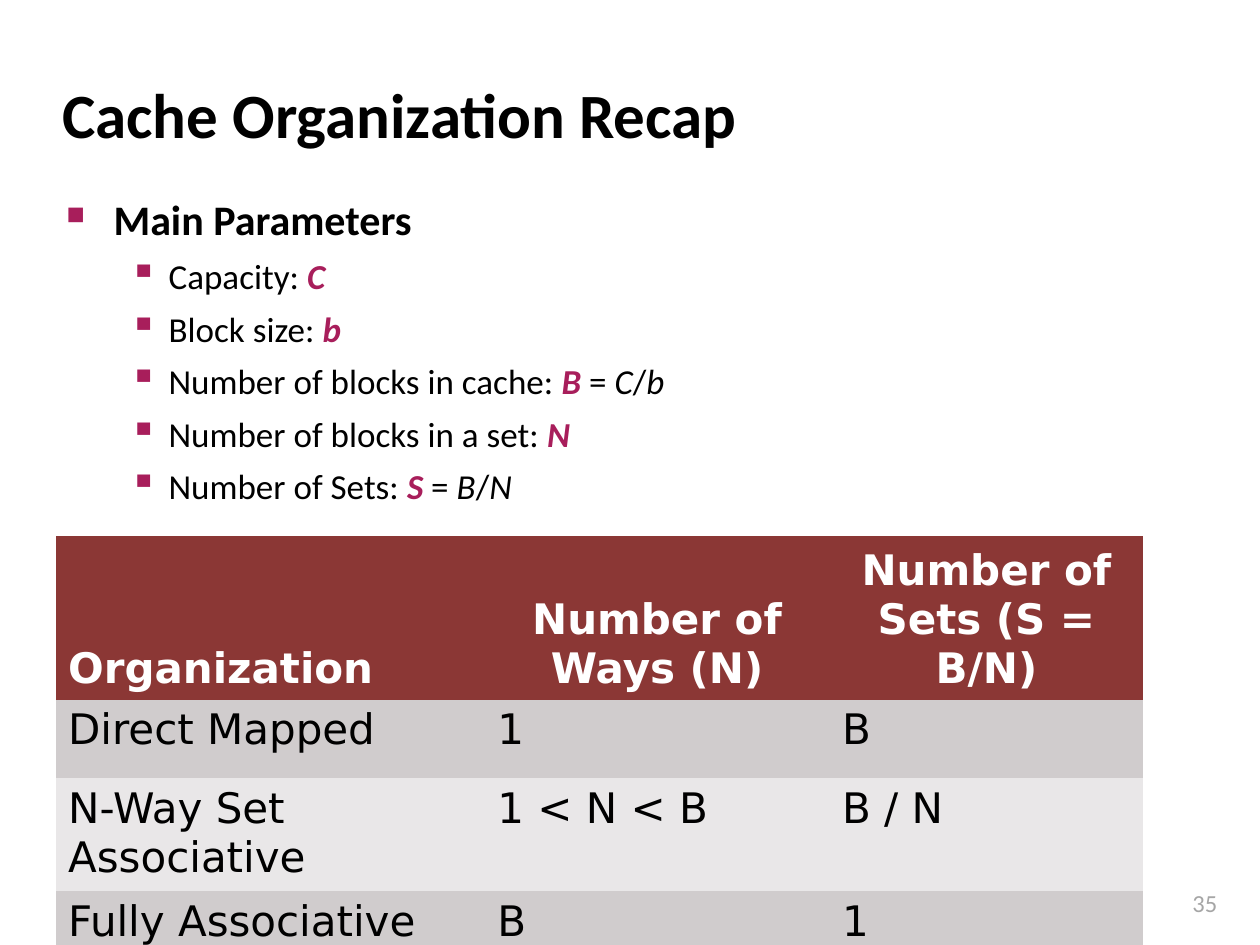
from lxml import etree
from pptx import Presentation
from pptx.dml.color import RGBColor
from pptx.enum.text import MSO_ANCHOR, MSO_AUTO_SIZE, PP_ALIGN
from pptx.oxml.ns import qn
from pptx.util import Cm, Pt

LEFT, CENTER, RIGHT = PP_ALIGN.LEFT, PP_ALIGN.CENTER, PP_ALIGN.RIGHT
TOP, MIDDLE, BOTTOM = MSO_ANCHOR.TOP, MSO_ANCHOR.MIDDLE, MSO_ANCHOR.BOTTOM
NO_AUTOFIT = MSO_AUTO_SIZE.NONE
BLACK, WHITE, GRAY, ACCENT = "000000", "FFFFFF", "A6A6A6", "A81E5B"
HEADER_FILL, BAND_FILLS = "8B3735", ("E9E7E8", "D0CCCD")


def color(hex_code):
    return RGBColor.from_string(hex_code)


def add_text(paragraph, text, size=20, font="Calibri", fill=BLACK, bold=False, italic=False, align=LEFT):
    paragraph.alignment = align
    run = paragraph.add_run()
    run.text = text
    run.font.size = Pt(size)
    run.font.name = font
    run.font.color.rgb = color(fill)
    run.font.bold = bold
    run.font.italic = italic


presentation = Presentation()
presentation.slide_width = Cm(25.4)
presentation.slide_height = Cm(19.05)
slide = presentation.slides.add_slide(presentation.slide_layouts[5])

title = slide.shapes.title
title.left, title.top, title.width, title.height = Cm(1), Cm(1.22), Cm(21.08), Cm(2.11)
title.text_frame.auto_size = NO_AUTOFIT
title.text_frame.vertical_anchor = MIDDLE
add_text(title.text_frame.paragraphs[0], "Cache Organization Recap", size=36, bold=True)

PLAIN = {}
SYMBOL = {"fill": ACCENT, "bold": True, "italic": True}
ITALIC = {"italic": True}
HEADING = {"size": 24, "bold": True}
parameters = [
    (0, [("Main Parameters", HEADING)]),
    (1, [("Capacity: ", PLAIN), ("C", SYMBOL)]),
    (1, [("Block size: ", PLAIN), ("b", SYMBOL)]),
    (1, [("Number of blocks in cache: ", PLAIN), ("B", SYMBOL), (" = ", PLAIN),
         ("C", ITALIC), ("/", PLAIN), ("b", ITALIC)]),
    (1, [("Number of blocks in a set: ", PLAIN), ("N", SYMBOL)]),
    (1, [("Number of Sets: ", PLAIN), ("S", SYMBOL), (" = ", PLAIN),
         ("B", ITALIC), ("/", PLAIN), ("N", ITALIC)]),
]
level_styles = [
    {"margin": 0.95, "indent": -0.95, "before": 24, "bullet": "■", "scale": 60},
    {"margin": 2.06, "indent": -0.79, "before": 6, "bullet": "▪", "scale": 110},
]

body = slide.shapes.add_textbox(Cm(1.09), Cm(3.78), Cm(21.95), Cm(6.81)).text_frame
body.word_wrap = True
for index, (level, runs) in enumerate(parameters):
    paragraph = body.add_paragraph() if index else body.paragraphs[0]
    style = level_styles[level]
    paragraph.level = level
    paragraph.space_before = Pt(style["before"])
    properties = paragraph._p.get_or_add_pPr()
    properties.set("marL", str(Cm(style["margin"])))
    properties.set("indent", str(Cm(style["indent"])))
    bullet_color = etree.SubElement(properties, qn("a:buClr"))
    etree.SubElement(bullet_color, qn("a:srgbClr"), val=ACCENT)
    etree.SubElement(properties, qn("a:buSzPct"), val=str(style["scale"] * 1000))
    etree.SubElement(properties, qn("a:buChar"), char=style["bullet"])
    for text, text_format in runs:
        add_text(paragraph, text, **text_format)

organizations = [
    ("Organization", "Number of Ways (N)", "Number of Sets (S = B/N)"),
    ("Direct Mapped", "1", "B"),
    ("N-Way Set Associative", "1 < N < B", "B / N"),
    ("Fully Associative", "B", "1"),
]
table = slide.shapes.add_table(4, 3, Cm(1.12), Cm(10.8), Cm(21.93), Cm(7.03)).table
for column, width in zip(table.columns, (8.65, 6.95, 6.33)):
    column.width = Cm(width)
for row, height in zip(table.rows, (2.29, 1.58, 1.58, 1.58)):
    row.height = Cm(height)
for row_index, values in enumerate(organizations):
    is_header = row_index == 0
    for column_index, text in enumerate(values):
        cell = table.cell(row_index, column_index)
        cell.fill.solid()
        cell.fill.fore_color.rgb = color(HEADER_FILL if is_header else BAND_FILLS[row_index % 2])
        cell.vertical_anchor = BOTTOM if is_header else TOP
        add_text(cell.text_frame.paragraphs[0], text, size=24, font="DejaVu Sans",
                 fill=WHITE if is_header else BLACK, bold=is_header,
                 align=CENTER if is_header and column_index else LEFT)
        if is_header:
            continue
        cell.text_frame.word_wrap = True

# Borders come from the table style; a style without grid lines keeps the bands seamless.
table_style = table._tbl.tblPr.find(qn("a:tableStyleId"))
table_style.text = "{2D5ABB26-0587-4C30-8999-92F81FD0307C}"

page_number = slide.shapes.add_textbox(Cm(22.86), Cm(17.78), Cm(1.93), Cm(0.86)).text_frame
page_number.word_wrap = True
add_text(page_number.paragraphs[0], "35", size=14, fill=GRAY, align=RIGHT)

presentation.save("out.pptx")
